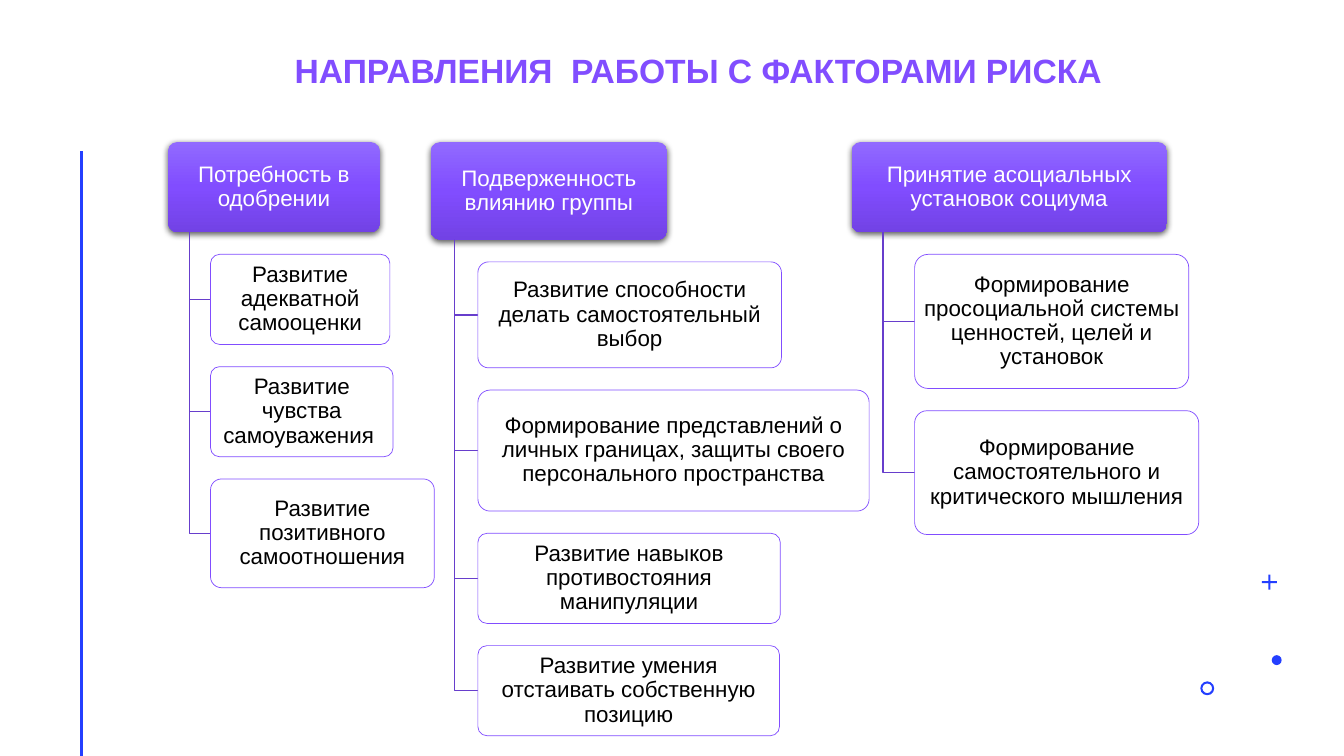
"""Builds the slide on directions of work with risk factors."""
from copy import deepcopy
from dataclasses import dataclass

from lxml import etree
from pptx import Presentation
from pptx.dml.color import RGBColor
from pptx.enum.shapes import MSO_CONNECTOR, MSO_SHAPE
from pptx.enum.text import MSO_ANCHOR, MSO_AUTO_SIZE, PP_ALIGN
from pptx.oxml.ns import qn
from pptx.util import Cm, Pt

ROUNDED = MSO_SHAPE.ROUNDED_RECTANGLE
CROSS, DONUT, OVAL = MSO_SHAPE.CROSS, MSO_SHAPE.DONUT, MSO_SHAPE.OVAL
STRAIGHT = MSO_CONNECTOR.STRAIGHT
CENTER = PP_ALIGN.CENTER
MIDDLE, BOTTOM = MSO_ANCHOR.MIDDLE, MSO_ANCHOR.BOTTOM
NO_AUTOFIT = MSO_AUTO_SIZE.NONE

HEADING = "НАПРАВЛЕНИЯ  РАБОТЫ С ФАКТОРАМИ РИСКА"

# fmt: off
FACTORS = [
    {"name": "Потребность в одобрении", "left": 4.24, "width": 5.33, "height": 2.27,
     "tasks": [("Развитие адекватной самооценки", 4.52, 2.27),
               ("Развитие чувства самоуважения ", 4.6, 2.27),
               ("Развитие позитивного самоотношения", 5.64, 2.74)]},
    {"name": "Подверженность влиянию группы", "left": 10.85, "width": 5.97, "height": 2.46,
     "tasks": [("Развитие способности делать самостоятельный выбор", 7.65, 2.67),
               ("Формирование представлений о личных границах, защиты своего "
                "персонального пространства", 9.86, 3.05),
               ("Развитие навыков противостояния манипуляции", 7.62, 2.27),
               ("Развитие умения отстаивать собственную позицию", 7.6, 2.27)]},
    {"name": "Принятие асоциальных установок социума", "left": 21.46, "width": 7.95, "height": 2.27,
     "tasks": [("Формирование просоциальной системы ценностей, целей и установок", 6.91, 3.38),
               ("Формирование самостоятельного и критического мышления", 7.16, 3.12)]},
]
# fmt: on
ACCENTS = [
    (CROSS, 31.8, 14.48, 0.38, 0.43),
    (DONUT, 30.25, 17.17, 0.35, 0.15),
    (OVAL, 32.05, 16.51, 0.25, None),
]
FACTOR_TOP, GAP = 3.58, 0.56
TRUNK_SHARE, TASK_SHARE = 0.1, 0.2


@dataclass(frozen=True)
class Theme:
    """Colours, font and type sizes of the slide."""
    violet: RGBColor = RGBColor.from_string("814DFF")
    light_violet: RGBColor = RGBColor.from_string("916AFF")
    dark_violet: RGBColor = RGBColor.from_string("7242E5")
    branch: RGBColor = RGBColor.from_string("673ECC")
    blue: RGBColor = RGBColor.from_string("243FFF")
    white: RGBColor = RGBColor.from_string("FFFFFF")
    black: RGBColor = RGBColor.from_string("000000")
    font: str = "Arial"
    heading_size: Pt = Pt(24)
    box_size: Pt = Pt(16)


THEME = Theme()


def write(frame, wording, size, color, spacing, anchor, insets, bold=False):
    """Fills a text frame with one centred paragraph."""
    frame.text = wording
    frame.word_wrap = True
    frame.auto_size = NO_AUTOFIT
    frame.vertical_anchor = anchor
    frame.margin_left = frame.margin_right = Cm(insets[0])
    frame.margin_top = frame.margin_bottom = Cm(insets[1])
    paragraph = frame.paragraphs[0]
    paragraph.alignment = CENTER
    paragraph.line_spacing = spacing
    paragraph.font.name = THEME.font
    paragraph.font.size = size
    paragraph.font.bold = bold
    paragraph.font.color.rgb = color


def add_box(slide, wording, color, left, top, width, height):
    """Adds a rounded box with its wording."""
    box = slide.shapes.add_shape(ROUNDED, Cm(left), Cm(top), Cm(width), Cm(height))
    box.adjustments[0] = 0.1
    box.shadow.inherit = False
    write(box.text_frame, wording, THEME.box_size, color, 0.9, MIDDLE, (0.08, 0.05))
    return box


def add_factor(slide, factor):
    """Adds the gradient box that heads a column."""
    box = add_box(slide, factor["name"], THEME.white, factor["left"], FACTOR_TOP,
                  factor["width"], factor["height"])
    box.line.fill.background()
    box.fill.gradient()
    box.fill.gradient_angle = 270
    properties = box._element.spPr
    stops = properties.find(".//" + qn("a:gsLst"))
    stops.insert(1, deepcopy(stops[0]))
    shades = (THEME.light_violet, THEME.violet, THEME.dark_violet)
    for index, (stop, shade) in enumerate(zip(box.fill.gradient_stops, shades)):
        stop.position = index / 2
        stop.color.rgb = shade
    shadow = etree.SubElement(
        properties.find(qn("a:effectLst")), qn("a:outerShdw"),
        blurRad=str(Pt(4.5)), dist=str(Pt(1.5)), dir="5400000", rotWithShape="0")
    tint = etree.SubElement(shadow, qn("a:srgbClr"), val=str(THEME.black))
    etree.SubElement(tint, qn("a:alpha"), val="63000")


def add_branch(slide, trunk, start, left, middle):
    """Adds the elbow from a column head to a task."""
    builder = slide.shapes.build_freeform(Cm(trunk), Cm(start))
    builder.add_line_segments([(Cm(trunk), Cm(middle)), (Cm(left), Cm(middle))], close=False)
    branch = builder.convert_to_shape()
    branch.shadow.inherit = False
    branch.fill.background()
    branch.line.color.rgb = THEME.branch
    branch.line.width = Pt(1)


def add_task(slide, wording, left, top, width, height):
    """Adds an outlined task box."""
    box = add_box(slide, wording, THEME.black, left, top, width, height)
    box.fill.solid()
    box.fill.fore_color.rgb = THEME.white
    tint = box._element.spPr.find(qn("a:solidFill")).find(qn("a:srgbClr"))
    etree.SubElement(tint, qn("a:alpha"), val="90000")
    box.line.color.rgb = THEME.violet
    box.line.width = Pt(0.5)


def add_column(slide, factor):
    """Stacks the tasks of a factor below its head."""
    add_factor(slide, factor)
    trunk = factor["left"] + TRUNK_SHARE * factor["width"]
    left = factor["left"] + TASK_SHARE * factor["width"]
    start = FACTOR_TOP + factor["height"]
    top = start + GAP
    for wording, width, height in factor["tasks"]:
        add_branch(slide, trunk, start, left, top + height / 2)
        add_task(slide, wording, left, top, width, height)
        top += height + GAP


def add_decoration(slide):
    """Adds the side rule and the small accents."""
    rule = slide.shapes.add_connector(STRAIGHT, Cm(2.06), Cm(3.81), Cm(2.06), Cm(19.05))
    rule.line.color.rgb = THEME.blue
    rule.line.width = Pt(2)
    etree.SubElement(rule._element.spPr, qn("a:effectLst"))
    for preset, left, top, size, adjustment in ACCENTS:
        accent = slide.shapes.add_shape(preset, Cm(left), Cm(top), Cm(size), Cm(size))
        if adjustment is not None:
            accent.adjustments[0] = adjustment
        accent.shadow.inherit = False
        accent.fill.solid()
        accent.fill.fore_color.rgb = THEME.blue
        accent.line.fill.background()


def main():
    """Builds and saves the slide."""
    deck = Presentation()
    deck.slide_width, deck.slide_height = Cm(33.87), Cm(19.05)
    slide = deck.slides.add_slide(deck.slide_layouts[5])
    add_decoration(slide)
    title = slide.shapes.title
    title.left, title.top, title.width, title.height = Cm(2.57), Cm(1.04), Cm(30.05), Cm(1.24)
    write(title.text_frame, HEADING, THEME.heading_size, THEME.violet, Pt(40), BOTTOM, (0, 0), True)
    for factor in FACTORS:
        add_column(slide, factor)
    deck.save("out.pptx")


if __name__ == "__main__":
    main()
